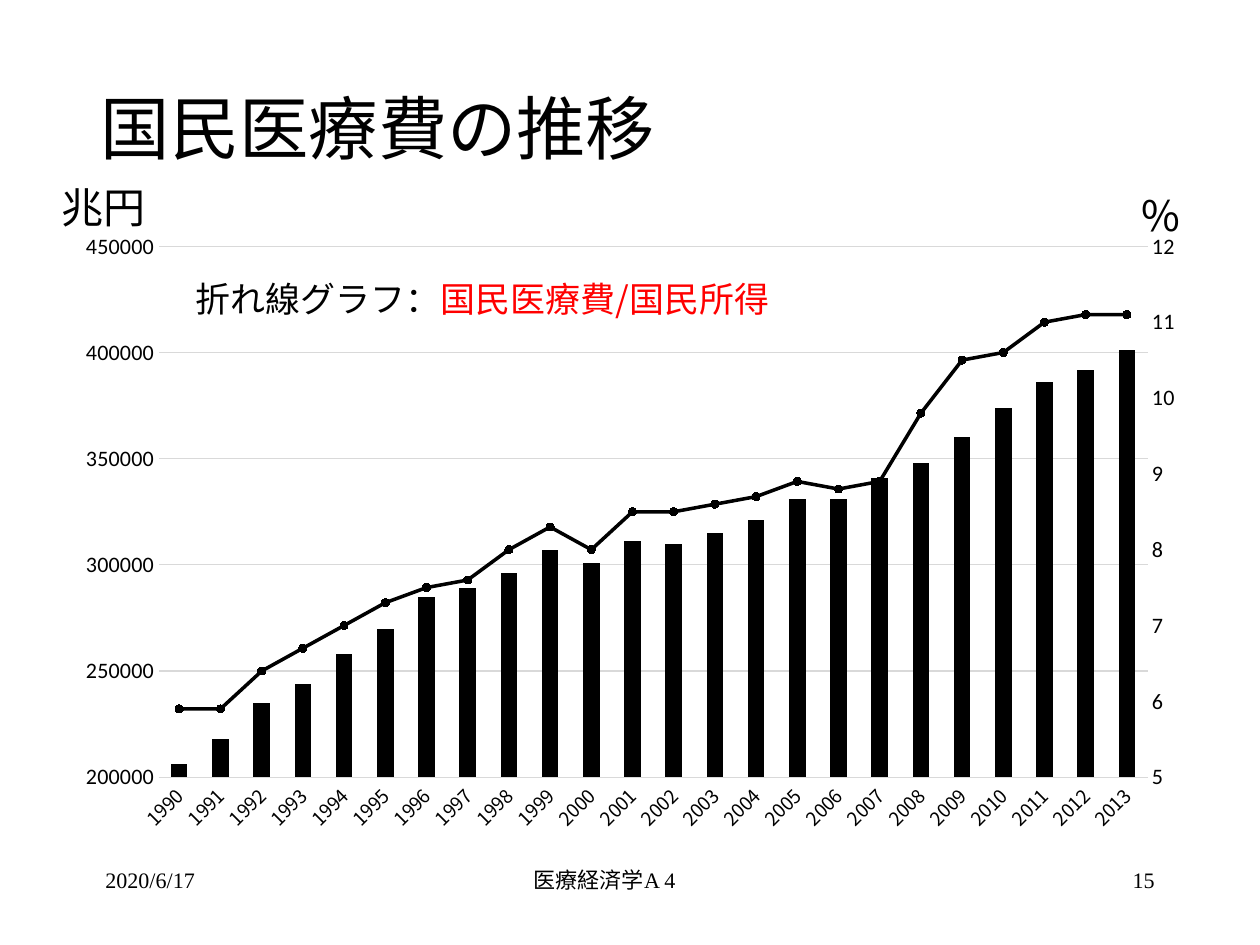
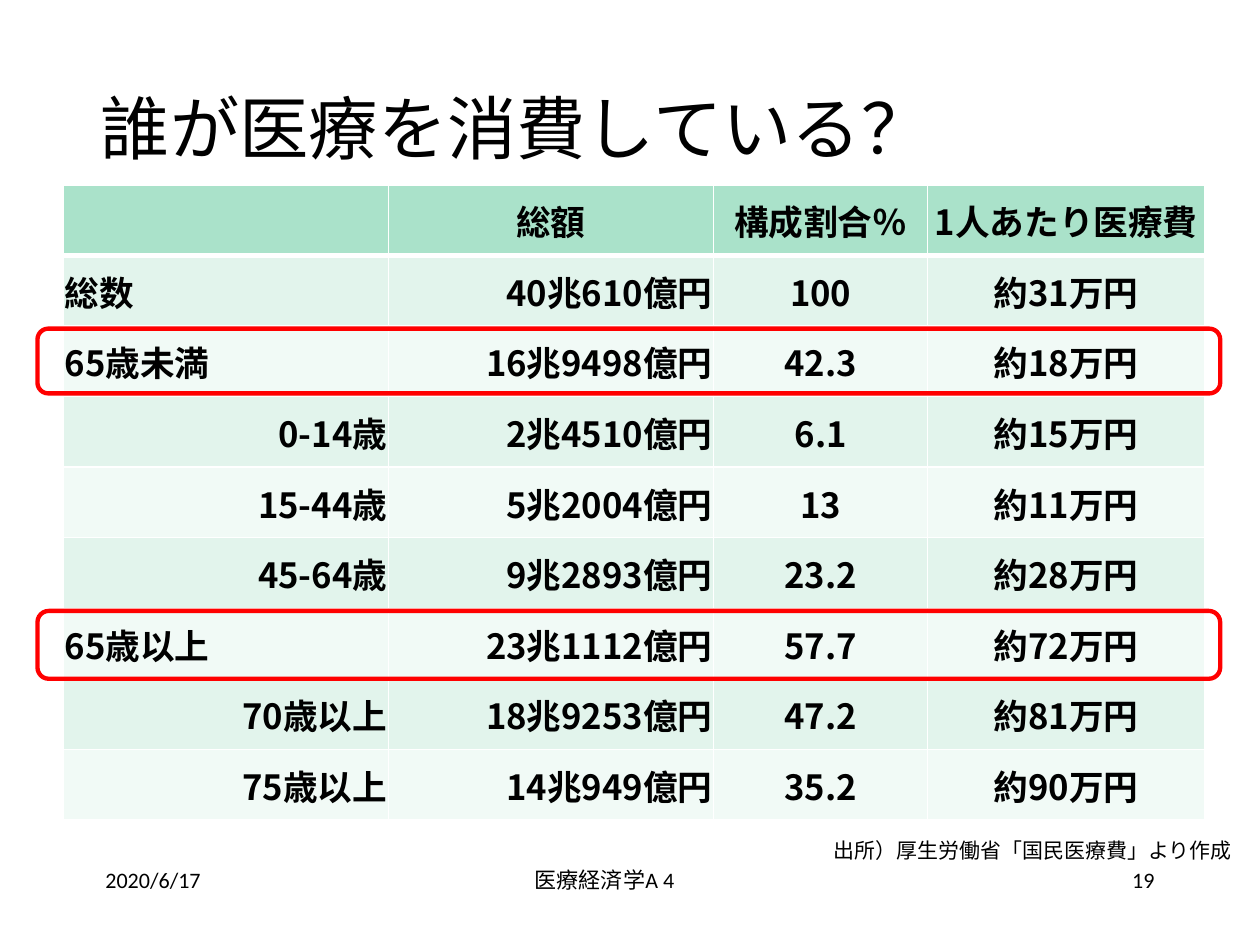
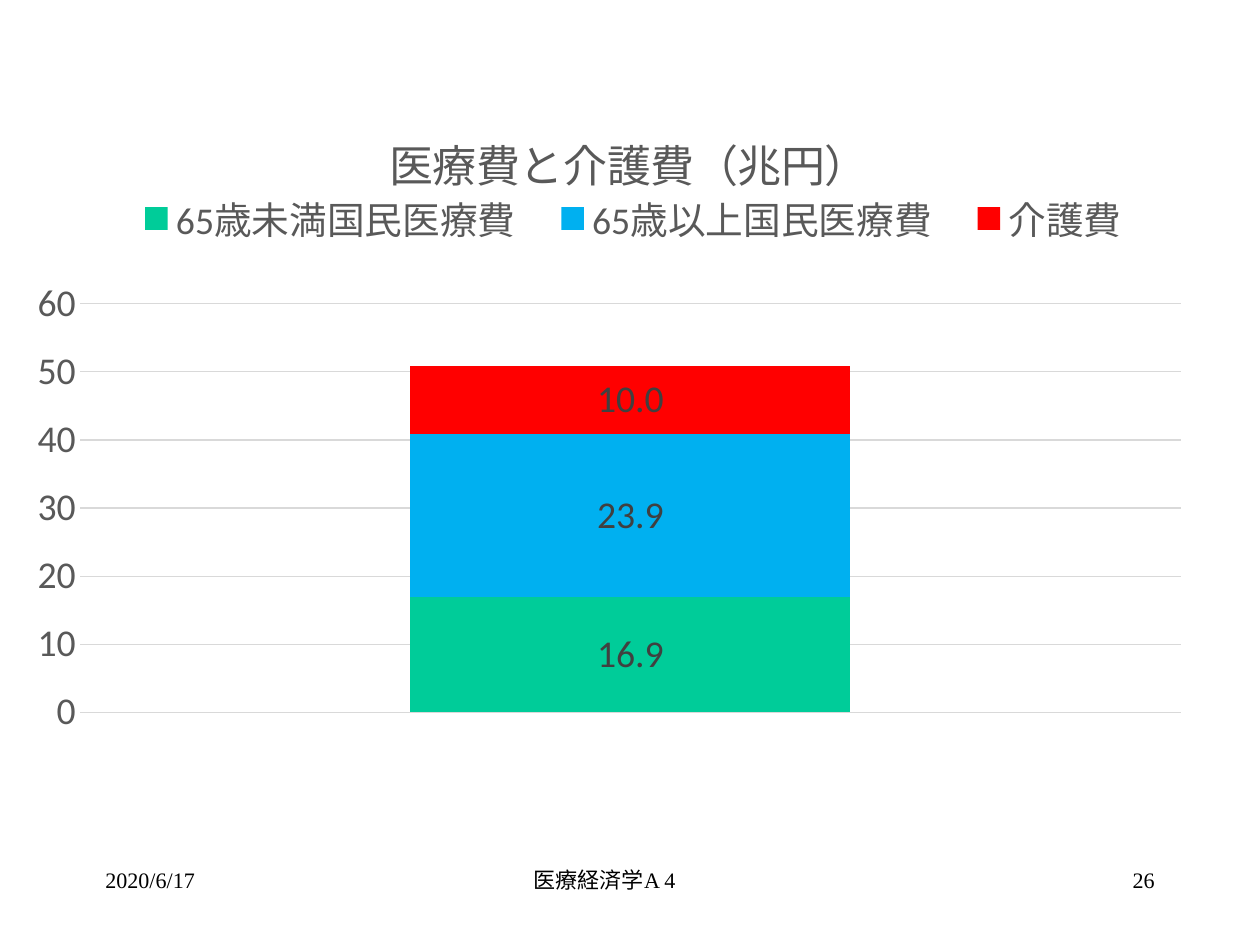
from pptx import Presentation
from pptx.chart.axis import ValueAxis
from pptx.chart.data import CategoryChartData
from pptx.dml.color import RGBColor
from pptx.enum.chart import (XL_CHART_TYPE, XL_LABEL_POSITION, XL_LEGEND_POSITION,
                             XL_MARKER_STYLE, XL_TICK_MARK)
from pptx.enum.shapes import MSO_SHAPE
from pptx.enum.text import MSO_ANCHOR, PP_ALIGN
from pptx.oxml import parse_xml
from pptx.oxml.ns import nsdecls, qn
from pptx.util import Cm, Pt

LEFT, CENTER, RIGHT = PP_ALIGN.LEFT, PP_ALIGN.CENTER, PP_ALIGN.RIGHT
TOP, MIDDLE = MSO_ANCHOR.TOP, MSO_ANCHOR.MIDDLE
CLUSTERED, STACKED = XL_CHART_TYPE.COLUMN_CLUSTERED, XL_CHART_TYPE.COLUMN_STACKED
NO_TICK = XL_TICK_MARK.NONE
LABEL_CENTER = XL_LABEL_POSITION.CENTER
LEGEND_BOTTOM = XL_LEGEND_POSITION.BOTTOM
CIRCLE = XL_MARKER_STYLE.CIRCLE
ROUND_RECT = MSO_SHAPE.ROUNDED_RECTANGLE

JAPANESE, SANS, SERIF = "Noto Sans CJK JP", "Calibri", "Times New Roman"
COLORS = {
    "text": "000000", "red": "FF0000", "white": "FFFFFF", "grid": "D9D9D9",
    "gray": "595959", "label": "404040", "green": "00CC99", "blue": "00B0F0",
    "header": "AAE2CA", "odd": "E2F4EC", "even": "F1FAF6",
}

TITLE_BOX = (2.01, 1.07, 23.98, 3.53)
DATE, COURSE = "2020/6/17", "医療経済学A 4"
FOOTER_TOP, FOOTER_HEIGHT = 19.28, 1.42

EXPENDITURE_TITLE = "国民医療費の推移"
YEARS = [str(year) for year in range(1990, 2014)]
EXPENDITURE = [206, 218, 235, 244, 258, 270, 285, 289, 296, 307, 301, 311,
               310, 315, 321, 331, 331, 341, 348, 360, 374, 386, 392, 401]
INCOME_SHARE = [5.9, 5.9, 6.4, 6.7, 7, 7.3, 7.5, 7.6, 8, 8.3, 8, 8.5,
                8.5, 8.6, 8.7, 8.9, 8.8, 8.9, 9.8, 10.5, 10.6, 11, 11.1, 11.1]
EXPENDITURE_CAPTIONS = [
    ((25.32, 4.11, 2.51, 1.4), 26.7, [("%", "text")]),
    ((1.12, 3.94, 2.51, 1.4), 26.7, [("兆円", "text")]),
    ((4.14, 6.1, 15.75, 1.22), 22.2,
     [("折れ線グラフ：", "text"), ("国民医療費/国民所得", "red")]),
]

CONSUMER_TITLE = "誰が医療を消費している？"
CONSUMER_ROWS = [
    ("", "総額", "構成割合％", "1人あたり医療費"),
    ("総数", "40兆610億円", "100", "約31万円"),
    ("65歳未満", "16兆9498億円", "42.3", "約18万円"),
    ("0-14歳", "2兆4510億円", "6.1", "約15万円"),
    ("15-44歳", "5兆2004億円", "13", "約11万円"),
    ("45-64歳", "9兆2893億円", "23.2", "約28万円"),
    ("65歳以上", "23兆1112億円", "57.7", "約72万円"),
    ("70歳以上", "18兆9253億円", "47.2", "約81万円"),
    ("75歳以上", "14兆949億円", "35.2", "約90万円"),
]
MAIN_GROUPS = {"総数", "65歳未満", "65歳以上"}
COLUMN_WIDTHS = (7.28, 7.28, 4.8, 6.2)
TABLE_LEFT, TABLE_TOP, ROW_HEIGHT = 1.42, 4.14, 1.58
HIGHLIGHTS = [(2, 1.45), (6, 1.52)]
SOURCE = "出所）厚生労働省「国民医療費」より作成"

CARE_TITLE = "医療費と介護費（兆円）"
CARE_COSTS = [("65歳未満国民医療費", 16.9, "green"),
              ("65歳以上国民医療費", 23.9, "blue"),
              ("介護費", 10.0, "red")]

RIGHT_AXES = f"""<c:plotArea {nsdecls("c")}>
<c:lineChart><c:grouping val="stacked"/><c:varyColors val="0"/>
<c:marker val="1"/><c:axId val="501"/><c:axId val="502"/></c:lineChart>
<c:catAx><c:axId val="501"/><c:scaling><c:orientation val="minMax"/></c:scaling>
<c:delete val="1"/><c:axPos val="b"/><c:crossAx val="502"/></c:catAx>
<c:valAx><c:axId val="502"/><c:scaling><c:orientation val="minMax"/></c:scaling>
<c:delete val="0"/><c:axPos val="r"/><c:numFmt formatCode="General" sourceLinked="0"/>
<c:majorTickMark val="none"/><c:minorTickMark val="none"/><c:tickLblPos val="nextTo"/>
<c:crossAx val="501"/><c:crosses val="max"/><c:crossBetween val="between"/></c:valAx>
</c:plotArea>"""


def rgb(name):
    return RGBColor.from_string(COLORS[name])


def assign(target, values):
    for key, value in values.items():
        setattr(target, key, value)


def style_font(font, size, color="text", face=JAPANESE, bold=False):
    assign(font, {"size": Pt(size), "name": face, "bold": bold})
    font.color.rgb = rgb(color)


def paint(target, color):
    target.fill.solid()
    target.fill.fore_color.rgb = rgb(color)


def draw_line(line, color, width):
    line.color.rgb = rgb(color)
    line.width = Pt(width)


def add_text(slide, box, runs, size, face=JAPANESE, align=LEFT, anchor=TOP):
    frame = slide.shapes.add_textbox(*map(Cm, box)).text_frame
    assign(frame, {"word_wrap": True, "vertical_anchor": anchor})
    paragraph = frame.paragraphs[0]
    paragraph.alignment = align
    for words, color in runs:
        run = paragraph.add_run()
        run.text = words
        style_font(run.font, size, color, face)


def add_base(deck, number, footer_face, title=None):
    slide = deck.slides.add_slide(deck.slide_layouts[6])
    if title:
        add_text(slide, TITLE_BOX, [(title, "text")], 44, anchor=MIDDLE)
    for left, width, words, align in ((2.11, 5.89, DATE, LEFT),
                                      (6.3, 14.48, COURSE, CENTER),
                                      (20.22, 5.89, str(number), RIGHT)):
        add_text(slide, (left, FOOTER_TOP, width, FOOTER_HEIGHT),
                 [(words, "text")], 14, footer_face, align)
    return slide


def set_east_asian(element):
    for latin in list(element.iter(qn("a:latin"))):
        latin.addnext(parse_xml(f'<a:ea {nsdecls("a")} typeface="{JAPANESE}"/>'))


def place(element, index, box, inner=False):
    for layout in element.findall(qn("c:layout")):
        element.remove(layout)
    target = '<c:layoutTarget val="inner"/>' if inner else ""
    modes = '<c:xMode val="edge"/><c:yMode val="edge"/>'
    sides = "".join(f'<c:{side} val="{value}"/>' for side, value in zip("xywh", box))
    element.insert(index, parse_xml(
        f'<c:layout {nsdecls("c")}><c:manualLayout>{target}{modes}{sides}'
        "</c:manualLayout></c:layout>"))


def style_value_axis(axis, size, color, low, high, step, grid=True):
    assign(axis, {"minimum_scale": low, "maximum_scale": high, "major_unit": step,
                  "major_tick_mark": NO_TICK, "has_major_gridlines": grid})
    style_font(axis.tick_labels.font, size, color, SANS)
    axis.format.line.fill.background()
    if grid:
        draw_line(axis.major_gridlines.format.line, "grid", 0.75)


def add_column_chart(slide, kind, box, categories, series, plot_box):
    data = CategoryChartData()
    data.categories = categories
    for name, values in series:
        data.add_series(name, values)
    chart = slide.shapes.add_chart(kind, *map(Cm, box), data).chart
    assign(chart, {"has_title": False, "has_legend": False})
    style_font(chart.font, 10, face=SANS)
    assign(chart.plots[0], {"gap_width": 150, "vary_by_categories": False})
    place(chart.element.xpath(".//c:plotArea")[0], 0, plot_box, inner=True)
    return chart


def move_to_right_axis(chart):
    area = chart.element.xpath(".//c:plotArea")[0]
    share = area.xpath(".//c:ser")[1]
    for flag in share.findall(qn("c:invertIfNegative")):
        share.remove(flag)
    line_chart, category_axis, value_axis = list(parse_xml(RIGHT_AXES))
    line_chart.insert(2, share)
    area.find(qn("c:barChart")).addnext(line_chart)
    area.find(qn("c:valAx")).addnext(category_axis)
    category_axis.addnext(value_axis)
    return ValueAxis(value_axis)


def build_expenditure(deck):
    slide = add_base(deck, 15, SERIF, EXPENDITURE_TITLE)
    chart = add_column_chart(
        slide, CLUSTERED, (1.42, 4.93, 25.4, 13.97), YEARS,
        [("国民医療費", [value * 1000 for value in EXPENDITURE]),
         ("国民医療費/国民所得", INCOME_SHARE)],
        (0.084, 0.042, 0.872, 0.851))
    paint(chart.plots[0].series[0].format, "text")
    years = chart.category_axis
    years.major_tick_mark = NO_TICK
    style_font(years.tick_labels.font, 12)
    draw_line(years.format.line, "grid", 0.75)
    chart.element.xpath(".//c:catAx/c:txPr/a:bodyPr")[0].set("rot", "-2700000")
    style_value_axis(chart.value_axis, 14, "text", 200000, 450000, 50000)
    style_value_axis(move_to_right_axis(chart), 14, "text", 5, 12, 1, grid=False)
    share = chart.plots[1].series[0]
    share.smooth = False
    draw_line(share.format.line, "text", 2.25)
    assign(share.marker, {"style": CIRCLE, "size": 5})
    paint(share.marker.format, "text")
    draw_line(share.marker.format.line, "text", 0.75)
    set_east_asian(chart.element)
    for box, size, runs in EXPENDITURE_CAPTIONS:
        add_text(slide, box, runs, size)
    return slide


def border_cell(cell, bottom):
    properties = cell._tc.get_or_add_tcPr()
    for side, width in (("L", 1), ("R", 1), ("T", 1), ("B", bottom)):
        properties.append(parse_xml(
            f'<a:ln{side} {nsdecls("a")} w="{Pt(width)}"><a:solidFill>'
            f'<a:srgbClr val="{COLORS["white"]}"/></a:solidFill></a:ln{side}>'))


def cell_alignment(row, column, words):
    if row == 0 or column > 1:
        return CENTER
    return LEFT if words in MAIN_GROUPS else RIGHT


def build_consumers(deck):
    slide = add_base(deck, 19, SANS, CONSUMER_TITLE)
    count = len(CONSUMER_ROWS)
    table = slide.shapes.add_table(
        count, len(COLUMN_WIDTHS), Cm(TABLE_LEFT), Cm(TABLE_TOP),
        Cm(sum(COLUMN_WIDTHS)), Cm(ROW_HEIGHT * count)).table
    for column, width in zip(table.columns, COLUMN_WIDTHS):
        column.width = Cm(width)
    for row, texts in enumerate(CONSUMER_ROWS):
        table.rows[row].height = Cm(ROW_HEIGHT)
        shade = "header" if row == 0 else ("even", "odd")[row % 2]
        for column, words in enumerate(texts):
            cell = table.cell(row, column)
            assign(cell, {"vertical_anchor": MIDDLE, "margin_left": Cm(0.03),
                          "margin_right": Cm(0.03), "margin_top": Cm(0.03),
                          "margin_bottom": 0})
            border_cell(cell, 3 if row == 0 else 1)
            paint(cell, shade)
            if words:
                paragraph = cell.text_frame.paragraphs[0]
                paragraph.alignment = cell_alignment(row, column, words)
                run = paragraph.add_run()
                run.text = words
                style_font(run.font, 22, bold=True)
    add_text(slide, (18.26, 18.64, 9.58, 0.84), [(SOURCE, "text")], 13.3, align=RIGHT)
    for row, height in HIGHLIGHTS:
        top = TABLE_TOP + row * ROW_HEIGHT + 0.06
        frame = slide.shapes.add_shape(ROUND_RECT, Cm(0.84), Cm(top), Cm(26.49), Cm(height))
        frame.shadow.inherit = False
        frame.fill.background()
        draw_line(frame.line, "red", 2.75)
    return slide


def build_care(deck):
    slide = add_base(deck, 26, SERIF)
    chart = add_column_chart(
        slide, STACKED, (0.84, 1.78, 26.34, 15.8), ["1"],
        [(name, [value]) for name, value, _ in CARE_COSTS],
        (0.033, 0.318, 0.939, 0.579))
    chart.plots[0].overlap = 100
    chart.category_axis.visible = False
    style_value_axis(chart.value_axis, 24, "gray", 0, 60, 10)
    for series, (_, _, color) in zip(chart.plots[0].series, CARE_COSTS):
        paint(series.format, color)
        assign(series.data_labels, {
            "show_value": True, "position": LABEL_CENTER,
            "number_format": "0.0", "number_format_is_linked": False})
        style_font(series.data_labels.font, 24, "label", SANS)
    chart.has_title = True
    heading = chart.chart_title.text_frame
    heading.text = CARE_TITLE
    style_font(heading.paragraphs[0].runs[0].font, 28, "gray", SANS)
    chart.has_legend = True
    assign(chart.legend, {"position": LEGEND_BOTTOM, "include_in_layout": False})
    style_font(chart.legend.font, 24, "gray", SANS)
    place(chart.element.xpath("./c:chart/c:title")[0], 1, (0.29, 0.055))
    place(chart.element.xpath(".//c:legend")[0], 1, (0.06, 0.157, 0.89, 0.08))
    set_east_asian(chart.element)
    return slide


def main():
    deck = Presentation()
    assign(deck, {"slide_width": Cm(28.22), "slide_height": Cm(21.16)})
    for build in (build_expenditure, build_consumers, build_care):
        set_east_asian(build(deck).element)
    deck.save("out.pptx")


if __name__ == "__main__":
    main()
